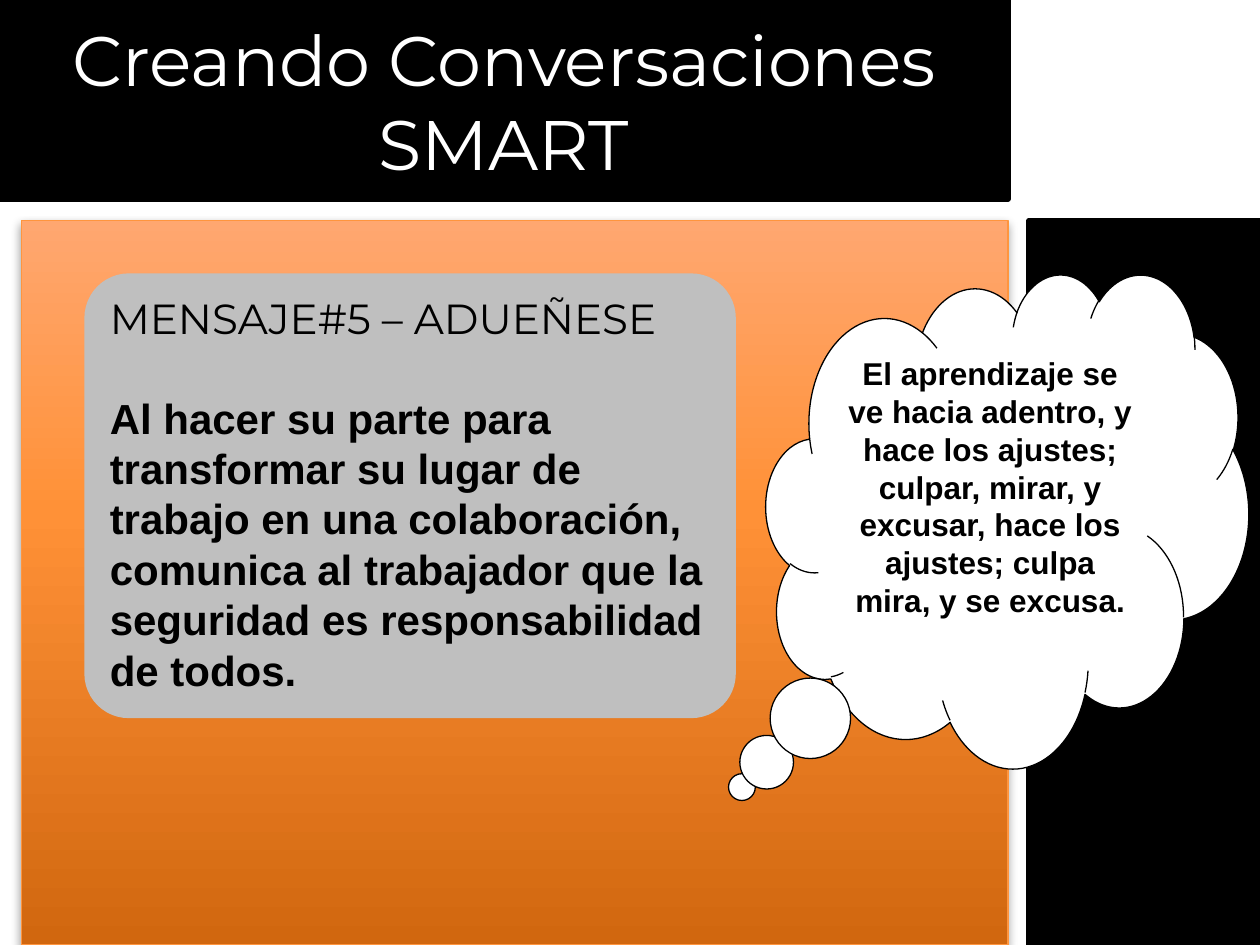
from dataclasses import dataclass

from lxml import etree
from pptx import Presentation
from pptx.dml.color import RGBColor
from pptx.enum.shapes import MSO_SHAPE
from pptx.enum.text import MSO_ANCHOR, PP_ALIGN
from pptx.oxml import parse_xml
from pptx.oxml.ns import nsdecls, qn
from pptx.util import Inches, Pt

RECTANGLE = MSO_SHAPE.RECTANGLE
ROUNDED = MSO_SHAPE.ROUNDED_RECTANGLE
CLOUD = MSO_SHAPE.CLOUD_CALLOUT
TOP, MIDDLE = MSO_ANCHOR.TOP, MSO_ANCHOR.MIDDLE
LEFT, CENTER = PP_ALIGN.LEFT, PP_ALIGN.CENTER


@dataclass(frozen=True)
class Theme:
    black: str = "000000"
    white: str = "FFFFFF"
    card: str = "BFBFBF"
    panel_line: str = "FF953E"
    panel_stops: tuple = ((0, "D1670F"), (60, "FF9137"), (100, "FFA770"))
    display_font: str = "Montserrat"
    body_font: str = "Arial"
    title_size: int = 40
    message_size: int = 24
    thought_size: int = 18


THEME = Theme()


def add_block(slide, preset, box, fill, line=None, line_width=0.75):
    block = slide.shapes.add_shape(preset, *map(Inches, box))
    block.shadow.inherit = False
    block.fill.solid()
    block.fill.fore_color.rgb = RGBColor.from_string(fill)
    if line:
        block.line.color.rgb = RGBColor.from_string(line)
        block.line.width = Pt(line_width)
    else:
        block.line.fill.background()
    return block


def add_panel(slide, box):
    """Add the orange panel with its upward gradient and soft shadow."""
    panel = add_block(slide, RECTANGLE, box, THEME.panel_line, THEME.panel_line)
    stops = "".join(
        f'<a:gs pos="{position * 1000}"><a:srgbClr val="{color}"/></a:gs>'
        for position, color in THEME.panel_stops
    )
    gradient = parse_xml(
        f'<a:gradFill {nsdecls("a")} rotWithShape="1"><a:gsLst>{stops}</a:gsLst>'
        '<a:lin ang="16200000" scaled="0"/></a:gradFill>'
    )
    properties = panel._element.spPr
    properties.replace(properties.find(qn("a:solidFill")), gradient)
    shadow = etree.SubElement(
        properties.find(qn("a:effectLst")), qn("a:outerShdw"),
        blurRad=str(Pt(5.2)), dist=str(Pt(3)), dir="5400000", rotWithShape="0",
    )
    color = etree.SubElement(shadow, qn("a:srgbClr"), val=THEME.black)
    etree.SubElement(color, qn("a:alpha"), val="40000")


def prepare_frame(shape, anchor):
    frame = shape.text_frame
    frame.word_wrap = True
    frame.vertical_anchor = anchor
    return frame


def write_paragraph(paragraph, text, size, color, font, bold=False, align=LEFT):
    paragraph.alignment = align
    run = paragraph.add_run()
    run.text = text
    run.font.name = font
    run.font.size = Pt(size)
    run.font.bold = bold
    run.font.color.rgb = RGBColor.from_string(color)


def add_title(slide, text):
    title = slide.shapes.add_textbox(*map(Inches, (0, 0.17, 8, 1.25)))
    frame = prepare_frame(title, MIDDLE)
    write_paragraph(frame.paragraphs[0], text, THEME.title_size, THEME.white,
                    THEME.display_font, align=CENTER)


def add_message(slide, heading, message):
    card = add_block(slide, ROUNDED, (0.67, 2.17, 5.17, 3.53), THEME.card)
    card.adjustments[0] = 0.1
    frame = prepare_frame(card, TOP)
    write_paragraph(frame.paragraphs[0], heading, THEME.message_size,
                    THEME.black, THEME.display_font)
    body = frame.add_paragraph()
    body.space_before = Pt(28)
    write_paragraph(body, message, THEME.message_size, THEME.black,
                    THEME.body_font, bold=True)


def add_thought(slide, text):
    cloud = add_block(slide, CLOUD, (6.08, 2.17, 3.83, 3.92),
                      THEME.white, THEME.black)
    cloud.adjustments[0] = -0.55
    cloud.adjustments[1] = 0.54
    thought = prepare_frame(cloud, TOP).paragraphs[0]
    thought.space_after = Pt(10)
    write_paragraph(thought, text, THEME.thought_size, THEME.black,
                    THEME.body_font, bold=True, align=CENTER)


def main():
    deck = Presentation()
    deck.slide_width, deck.slide_height = Inches(10), Inches(7.5)
    slide = deck.slides.add_slide(deck.slide_layouts[6])

    add_panel(slide, (0.17, 1.75, 7.83, 5.75))
    for band in ((0, 0, 8, 1.58), (8.17, 1.75, 1.83, 5.75)):
        add_block(slide, RECTANGLE, band, THEME.black, THEME.black, 3.35)
    add_title(slide, "Creando Conversaciones SMART")
    add_message(
        slide,
        "MENSAJE#5 – ADUEÑESE",
        "Al hacer su parte para transformar su lugar de trabajo en una "
        "colaboración, comunica al trabajador que la seguridad es "
        "responsabilidad de todos.",
    )
    add_thought(
        slide,
        "El aprendizaje se ve hacia adentro, y hace los ajustes; culpar, "
        "mirar, y excusar, hace los ajustes; culpa mira, y se excusa.",
    )
    deck.save("out.pptx")


if __name__ == "__main__":
    main()
